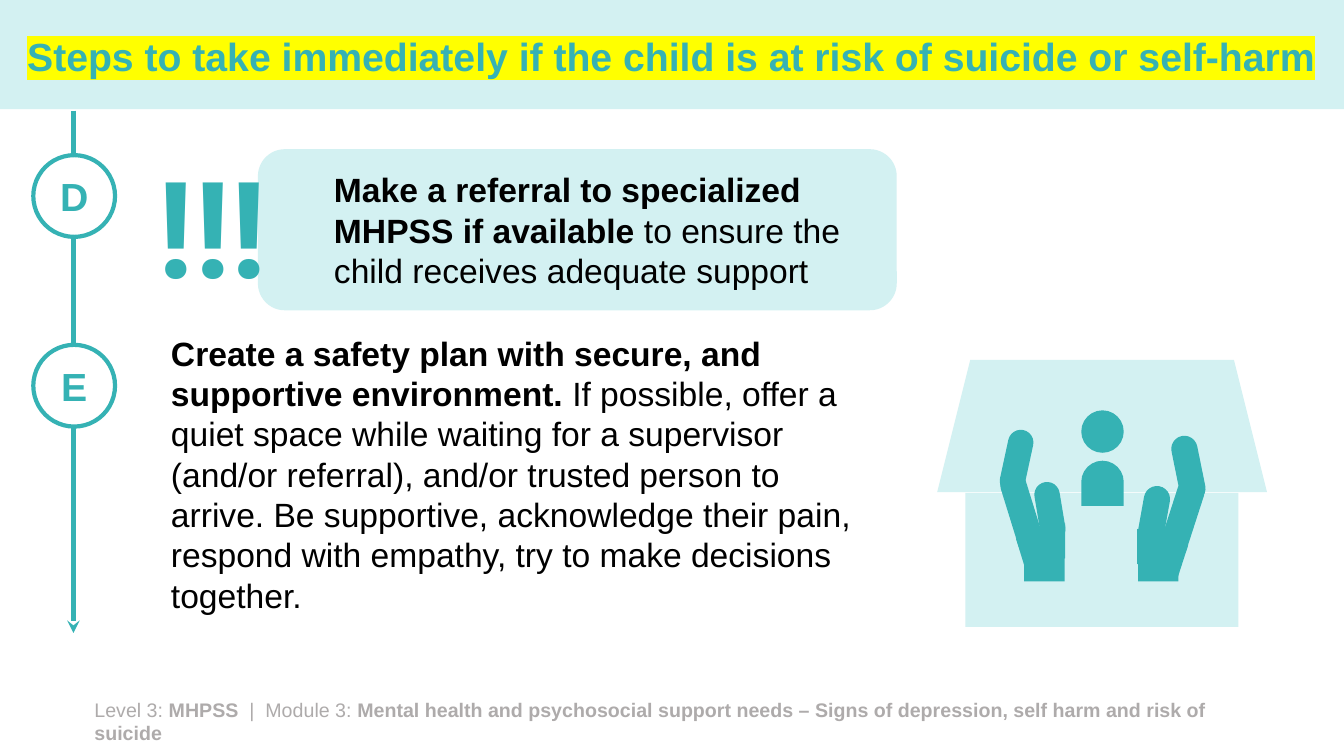
from lxml.etree import SubElement
from pptx import Presentation
from pptx.dml.color import RGBColor
from pptx.enum.shapes import MSO_CONNECTOR, MSO_SHAPE
from pptx.enum.text import MSO_ANCHOR, MSO_AUTO_SIZE, PP_ALIGN
from pptx.oxml.ns import qn
from pptx.util import Cm, Pt

TEAL, PALE, WHITE, BLACK, GREY = "35B2B4", "D3F1F2", "FFFFFF", "000000", "AEABAB"


def add_block(shapes, kind, box, fill, rot=0, adj=()):
    sp = shapes.add_shape(kind, *[Cm(v) for v in box])
    sp.shadow.inherit = False
    sp.fill.solid()
    sp.fill.fore_color.rgb = RGBColor.from_string(fill)
    sp.line.fill.background()
    sp.rotation = rot
    for i, value in enumerate(adj):
        sp.adjustments[i] = value
    return sp


def write(tf, runs, size, color, font="Arial", align=PP_ALIGN.LEFT, anchor=MSO_ANCHOR.TOP):
    tf.word_wrap = True
    tf.auto_size = MSO_AUTO_SIZE.NONE
    tf.vertical_anchor = anchor
    p = tf.paragraphs[0]
    p.alignment = align
    for text, bold in runs:
        r = p.add_run()
        r.text = text
        r.font.size = Pt(size)
        r.font.bold = bold
        r.font.name = font
        r.font.color.rgb = RGBColor.from_string(color)
    return p


prs = Presentation()
prs.slide_width, prs.slide_height = Cm(33.87), Cm(19.05)
s = prs.slides.add_slide(prs.slide_layouts[5])

add_block(s.shapes, MSO_SHAPE.RECTANGLE, (0, 0, 33.87, 2.75), PALE)

title = s.shapes.title
title.left, title.top, title.width, title.height = Cm(-0.03), Cm(-0.36), Cm(33.88), Cm(3.68)
s.shapes._spTree.append(title._element)
p = write(title.text_frame,
          [("Steps to take immediately if the child is at risk of suicide or self-harm", True)],
          28, TEAL, align=PP_ALIGN.CENTER, anchor=MSO_ANCHOR.MIDDLE)
p.line_spacing = 0.9
rPr = p.runs[0].font._element
highlight = SubElement(rPr, qn("a:highlight"))
SubElement(highlight, qn("a:srgbClr"), val="FFFF00")
rPr.find(qn("a:solidFill")).addnext(highlight)

footer = s.shapes.add_textbox(Cm(2.13), Cm(17.45), Cm(28.83), Cm(1.45))
write(footer.text_frame, [
    ("Level 3: ", False),
    ("MHPSS", True),
    ("  |  Module 3: ", False),
    ("Mental health and psychosocial support needs – Signs of depression, "
     "self harm and risk of suicide", True),
], 14, GREY)

callout = add_block(s.shapes, MSO_SHAPE.ROUNDED_RECTANGLE, (6.5, 3.76, 16.1, 4.06), PALE, adj=(0.167,))
p = write(callout.text_frame, [
    ("Make a referral to specialized MHPSS if available ", True),
    ("to ensure the child receives adequate support", False),
], 24, BLACK, anchor=MSO_ANCHOR.MIDDLE)
p._p.get_or_add_pPr().set("marL", str(Cm(1.47)))

plan = s.shapes.add_textbox(Cm(4.06), Cm(8.26), Cm(18.08), Cm(7.77))
p = write(plan.text_frame, [
    ("Create a safety plan with secure, and supportive environment.", True),
    (" If possible, offer a quiet space while waiting for a supervisor (and/or referral), "
     "and/or trusted person to arrive. Be supportive, acknowledge their pain, respond with "
     "empathy, try to make decisions together.", False),
], 24, BLACK)
p.space_before = Pt(10)

timeline = s.shapes.add_connector(MSO_CONNECTOR.STRAIGHT, Cm(1.85), Cm(2.79), Cm(1.85), Cm(15.95))
timeline.line.color.rgb = RGBColor.from_string(TEAL)
timeline.line.width = Pt(3)
SubElement(timeline.line._get_or_add_ln(), qn("a:tailEnd"), type="stealth")
SubElement(timeline._element.spPr, qn("a:effectLst"))

for letter, top in (("D", 3.91), ("E", 8.69)):
    step = add_block(s.shapes, MSO_SHAPE.OVAL, (0.84, top, 2.06, 2.06), WHITE)
    step.line.color.rgb = RGBColor.from_string(TEAL)
    step.line.width = Pt(3)
    write(step.text_frame, [(letter, True)], 28, TEAL, align=PP_ALIGN.CENTER, anchor=MSO_ANCHOR.MIDDLE)

shelter = s.shapes.add_group_shape().shapes
add_block(shelter, MSO_SHAPE.TRAPEZOID, (23.62, 9.07, 8.31, 3.33), PALE, adj=(0.25,))
add_block(shelter, MSO_SHAPE.RECTANGLE, (24.33, 12.42, 6.88, 3.38), PALE)

fingers = [
    (25.43, 11.86, 0.66, 2.16, 342.8),
    (25.3, 10.82, 0.64, 1.63, 12.2),
    (26.14, 12.14, 0.64, 1.52, 350.5),
    (29.44, 12.01, 0.69, 2.16, 17.9),
    (29.62, 10.97, 0.66, 1.68, 348.5),
    (28.75, 12.24, 0.66, 1.52, 10.2),
]
for *box, rot in fingers:
    add_block(shelter, MSO_SHAPE.ROUNDED_RECTANGLE, box, TEAL, rot, (0.5,))

left_palm = add_block(shelter, MSO_SHAPE.FLOWCHART_MANUAL_INPUT, (25.93, 13.13, 0.84, 1.3), TEAL, 72.8)
left_palm._element.spPr.xfrm.set("flipH", "1")
add_block(shelter, MSO_SHAPE.FLOWCHART_MANUAL_INPUT, (28.75, 13.26, 0.84, 1.35), TEAL, 287.9)
for wrist_left in (25.81, 28.68):
    add_block(shelter, MSO_SHAPE.RECTANGLE, (wrist_left, 13.79, 1.02, 0.86), TEAL)

add_block(shelter, MSO_SHAPE.ROUND_2_SAME_RECTANGLE, (27.25, 11.61, 1.07, 1.14), TEAL, adj=(0.5, 0))
add_block(shelter, MSO_SHAPE.OVAL, (27.25, 10.34, 1.07, 1.07), TEAL)

alert = s.shapes.add_textbox(Cm(3.73), Cm(3.51), Cm(5.56), Cm(4.37))
write(alert.text_frame, [("!!!", True)], 96, TEAL, "Roboto")

prs.save("out.pptx")
